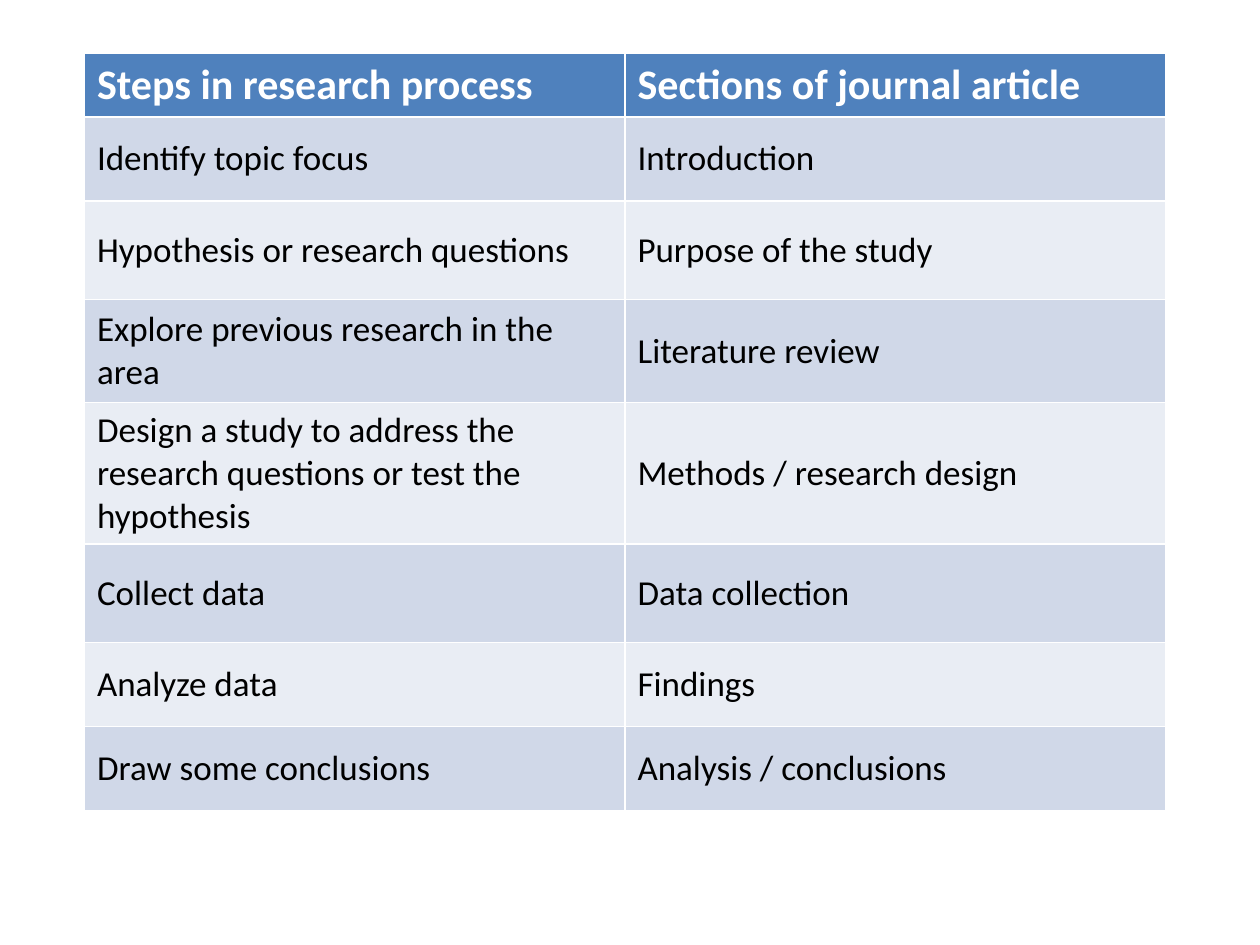
from pptx import Presentation
from pptx.dml.color import RGBColor
from pptx.enum.text import MSO_ANCHOR
from pptx.util import Inches, Pt

WHITE = RGBColor(0xFF, 0xFF, 0xFF)
BLACK = RGBColor(0x00, 0x00, 0x00)
HEADER_BLUE = RGBColor(0x4F, 0x81, 0xBD)
BANDS = (RGBColor(0xE9, 0xED, 0xF4), RGBColor(0xD0, 0xD8, 0xE8))

FONT = "Calibri"
LEFT, TOP = 0.67, 0.42
COLUMN_WIDTH = 4.29

# Row height in inches, research step, article section
ROWS = [
    (0.5, "Steps in research process", "Sections of journal article"),
    (0.67, "Identify topic focus", "Introduction"),
    (0.78, "Hypothesis or research questions", "Purpose of the study"),
    (0.82, "Explore previous research in the area", "Literature review"),
    (1.12, "Design a study to address the research questions or test the hypothesis",
     "Methods / research design"),
    (0.78, "Collect data", "Data collection"),
    (0.67, "Analyze data", "Findings"),
    (0.67, "Draw some conclusions", "Analysis / conclusions"),
]


def fill_cell(cell, text, fill, color, size, bold, anchor):
    cell.fill.solid()
    cell.fill.fore_color.rgb = fill
    cell.vertical_anchor = anchor
    p = cell.text_frame.paragraphs[0]
    p.text = text
    p.font.name = FONT
    p.font.size = Pt(size)
    p.font.bold = bold
    p.font.color.rgb = color


def add_steps_table(slide):
    """Add the table; its default style supplies the white cell borders."""
    height = sum(row[0] for row in ROWS)
    table = slide.shapes.add_table(
        len(ROWS), 2, Inches(LEFT), Inches(TOP),
        Inches(2 * COLUMN_WIDTH), Inches(height)).table
    for i, (row_height, *texts) in enumerate(ROWS):
        table.rows[i].height = Inches(row_height)
        for j, text in enumerate(texts):
            cell = table.cell(i, j)
            if i == 0:
                fill_cell(cell, text, HEADER_BLUE, WHITE, 24, True, MSO_ANCHOR.TOP)
            else:
                fill_cell(cell, text, BANDS[i % 2], BLACK, 20, False, MSO_ANCHOR.MIDDLE)


def main():
    prs = Presentation()
    prs.slide_width, prs.slide_height = Inches(10), Inches(7.5)
    slide = prs.slides.add_slide(prs.slide_layouts[6])
    add_steps_table(slide)
    prs.save("out.pptx")


if __name__ == "__main__":
    main()
